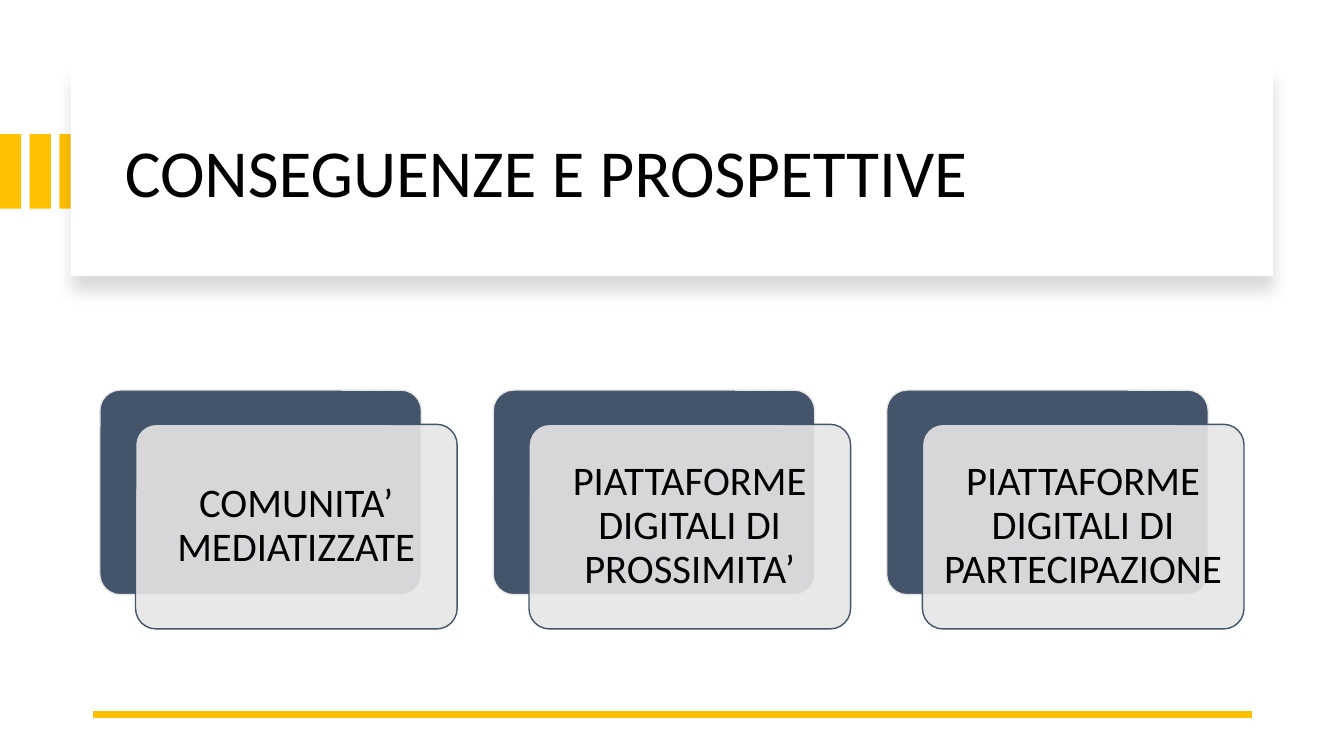
from dataclasses import dataclass
from typing import Any, Optional

from lxml.etree import SubElement
from pptx import Presentation
from pptx.dml.color import RGBColor
from pptx.enum.shapes import MSO_CONNECTOR, MSO_SHAPE
from pptx.enum.text import MSO_ANCHOR, PP_ALIGN
from pptx.oxml.ns import qn
from pptx.util import Inches, Pt

# Grid: square cells of a tenth of an inch
CELL = Inches(0.1)
SLIDE_COLUMNS, SLIDE_ROWS = 133.33, 75

COLORS = {
    "white": "FFFFFF",
    "black": "000000",
    "gold": "FFC000",
    "slate": "44546A",
    "silver": "E7E6E6",
}


@dataclass(frozen=True)
class Box:
    column: float
    row: float
    columns: float
    rows: float

    def lengths(self) -> list[int]:
        return [cells(n) for n in (self.column, self.row, self.columns, self.rows)]

    def moved(self, columns: float, rows: float = 0) -> "Box":
        return Box(self.column + columns, self.row + rows, self.columns, self.rows)


@dataclass(frozen=True)
class Style:
    fill: str
    line: Optional[str] = None
    opacity: int = 100
    corner: Optional[float] = None


STRIPE = Box(0, 13.3, 2.1, 7.4)
STRIPE_COUNT, STRIPE_PITCH = 3, 2.95
BANNER = Box(7, 6.7, 119.3, 20.7)
TITLE = Box(11.4, 8.9, 111.3, 17)
CARD = Box(9.9, 38.7, 31.9, 20.3)
CARD_PITCH = 39.03
FRONT_OFFSET = (3.55, 3.4)
RULE_LEFT, RULE_RIGHT, RULE_ROW = 9.2, 124.2, 70.9

BACK_STYLE = Style("slate", "silver", corner=0.1)
FRONT_STYLE = Style("silver", "slate", opacity=90, corner=0.1)
CARD_INSET = Inches(0.12)

TITLE_FRAME = {"word_wrap": True, "vertical_anchor": MSO_ANCHOR.MIDDLE}
CARD_FRAME = TITLE_FRAME | {
    f"margin_{side}": CARD_INSET for side in ("left", "top", "right", "bottom")
}
TITLE_PARAGRAPH = {"line_spacing": 0.9, "alignment": PP_ALIGN.LEFT}
CARD_PARAGRAPH = TITLE_PARAGRAPH | {"alignment": PP_ALIGN.CENTER}
TITLE_FONT = {"name": "Calibri", "size": Pt(48)}
CARD_FONT = TITLE_FONT | {"size": Pt(29)}

CARD_TEXTS = (
    "COMUNITA’ MEDIATIZZATE",
    "PIATTAFORME DIGITALI DI PROSSIMITA’",
    "PIATTAFORME DIGITALI DI PARTECIPAZIONE",
)


def cells(count: float) -> int:
    return round(count * CELL)


def color(name: str) -> RGBColor:
    return RGBColor.from_string(COLORS[name])


def apply_format(target: Any, values: dict[str, Any]) -> None:
    for name, value in values.items():
        setattr(target, name, value)


def add_panel(shapes: Any, box: Box, style: Style) -> Any:
    kind = MSO_SHAPE.RECTANGLE if style.corner is None else MSO_SHAPE.ROUNDED_RECTANGLE
    shape = shapes.add_shape(kind, *box.lengths())
    shape.shadow.inherit = False
    if style.corner is not None:
        shape.adjustments[0] = style.corner
    shape.fill.solid()
    shape.fill.fore_color.rgb = color(style.fill)
    if style.opacity < 100:
        fill_color = shape.fill._xPr.find(qn("a:solidFill"))[0]
        SubElement(fill_color, qn("a:alpha"), val=str(style.opacity * 1000))
    if style.line is None:
        shape.line.fill.background()
    else:
        shape.line.color.rgb = color(style.line)
        shape.line.width = Pt(1)
    return shape


def add_soft_shadow(shape: Any) -> None:
    effects = shape._element.spPr.find(qn("a:effectLst"))
    shadow = SubElement(
        effects, qn("a:outerShdw"), blurRad=str(Pt(11)), dist=str(Pt(10)),
        dir=str(90 * 60000), algn="t", rotWithShape="0",
    )
    shadow_color = SubElement(shadow, qn("a:srgbClr"), val=COLORS["black"])
    SubElement(shadow_color, qn("a:alpha"), val="15000")


def write_text(shape: Any, text: str, frame_format: dict[str, Any],
               paragraph_format: dict[str, Any], font_format: dict[str, Any]) -> None:
    apply_format(shape.text_frame, frame_format)
    paragraph = shape.text_frame.paragraphs[0]
    apply_format(paragraph, paragraph_format)
    run = paragraph.add_run()
    run.text = text
    apply_format(run.font, font_format)
    run.font.color.rgb = color("black")


def add_rule(shapes: Any) -> None:
    row = cells(RULE_ROW)
    rule = shapes.add_connector(
        MSO_CONNECTOR.STRAIGHT, cells(RULE_RIGHT), row, cells(RULE_LEFT), row
    )
    rule.line.color.rgb = color("gold")
    rule.line.width = Pt(4.5)
    SubElement(rule._element.spPr, qn("a:effectLst"))


def main() -> None:
    presentation = Presentation()
    presentation.slide_width = cells(SLIDE_COLUMNS)
    presentation.slide_height = cells(SLIDE_ROWS)
    slide = presentation.slides.add_slide(presentation.slide_layouts[6])
    slide.background.fill.solid()
    slide.background.fill.fore_color.rgb = color("white")

    # Gold stripes at the left edge
    stripes = slide.shapes.add_group_shape()
    for index in range(STRIPE_COUNT):
        add_panel(stripes.shapes, STRIPE.moved(index * STRIPE_PITCH), Style("gold"))

    # Title banner
    add_soft_shadow(add_panel(slide.shapes, BANNER, Style("white")))
    title = slide.shapes.add_textbox(*TITLE.lengths())
    write_text(title, "CONSEGUENZE E PROSPETTIVE",
               TITLE_FRAME, TITLE_PARAGRAPH, TITLE_FONT)

    # Closing rule
    add_rule(slide.shapes)

    # Layered cards
    cards = slide.shapes.add_group_shape()
    for index, text in enumerate(CARD_TEXTS):
        back = CARD.moved(index * CARD_PITCH)
        add_panel(cards.shapes, back, BACK_STYLE)
        front = add_panel(cards.shapes, back.moved(*FRONT_OFFSET), FRONT_STYLE)
        write_text(front, text, CARD_FRAME, CARD_PARAGRAPH, CARD_FONT)

    presentation.save("out.pptx")


if __name__ == "__main__":
    main()
